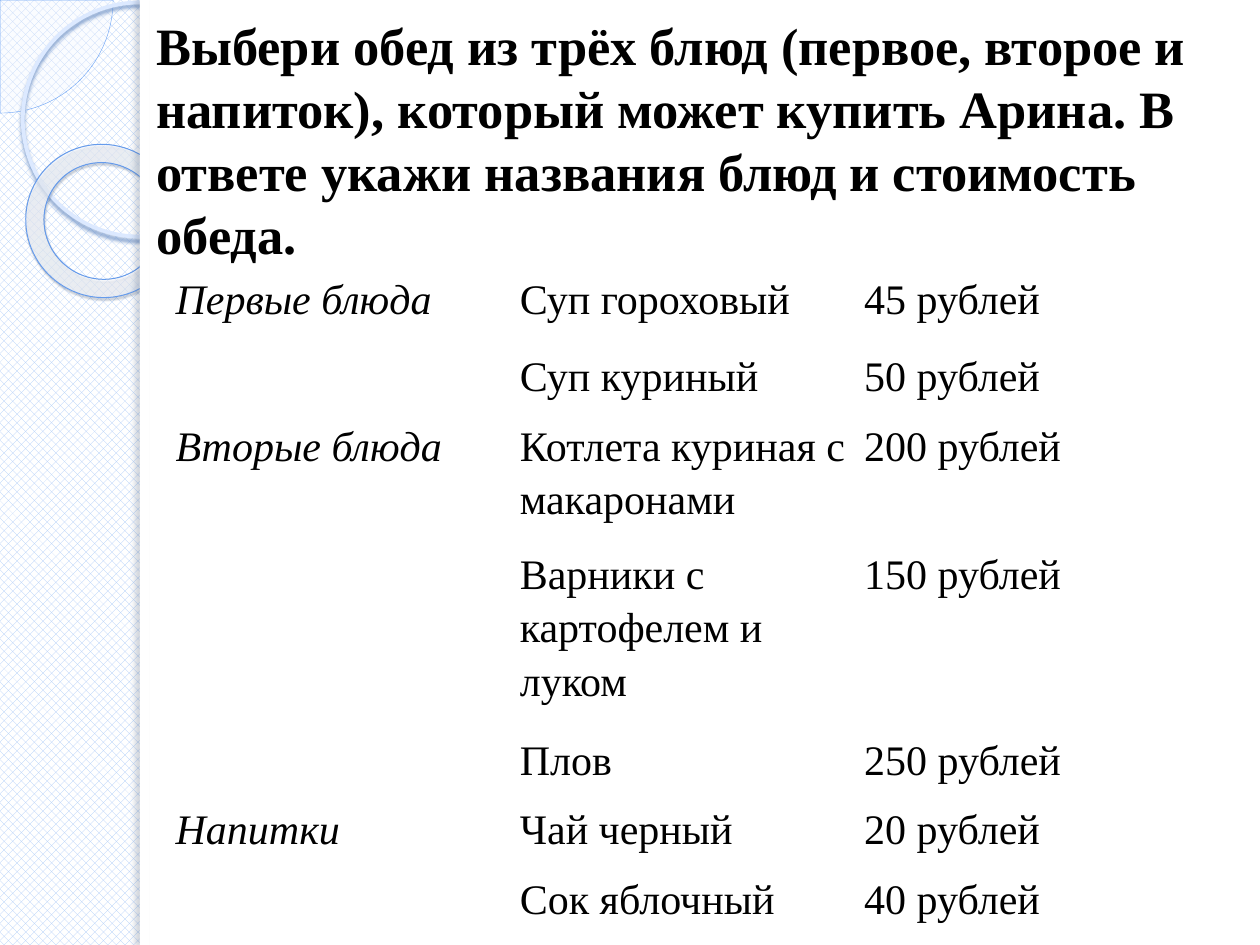
from lxml.etree import SubElement
from pptx import Presentation
from pptx.dml.color import RGBColor
from pptx.enum.dml import MSO_PATTERN
from pptx.enum.shapes import MSO_SHAPE
from pptx.enum.text import MSO_AUTO_SIZE
from pptx.oxml import parse_xml
from pptx.oxml.ns import nsdecls, qn
from pptx.util import Cm, Pt

FONT = "Times New Roman"
COLORS = {
    "text": "000000", "panel": "FFFFFF", "pattern": "ACCBF9",
    "pie": "F2F6FF", "pie_line": "72A7F6",
    "circle_line": "DCE9FF", "circle_shadow": "7193C6",
    "ring_in": "F5F9FF", "ring_mid": "FBFCFF", "ring_out": "75ACFF",
    "ring_line": "659BEC", "ring_shadow": "31486A", "edge_shadow": "54647E",
}
TITLE = ("Выбери обед из трёх блюд (первое, второе и напиток), который может "
         "купить Арина. В ответе укажи названия блюд и стоимость обеда.")
MENU = [
    ("Первые блюда", [("Суп гороховый", "45 рублей", 1.55),
                      ("Суп куриный", "50 рублей", 1.4)]),
    ("Вторые блюда", [("Котлета куриная с макаронами", "200 рублей", 2.55),
                      ("Варники с картофелем и луком", "150 рублей", 3.7),
                      ("Плов", "250 рублей", 1.4)]),
    ("Напитки", [("Чай черный", "20 рублей", 1.4),
                 ("Сок яблочный", "40 рублей", 1.4)]),
]


def rgb(name):
    """Return the named colour."""
    return RGBColor.from_string(COLORS[name])


def add_color(parent, name, alpha):
    """Append a colour of the given opacity in percent to an XML element."""
    clr = SubElement(parent, qn("a:srgbClr"), val=COLORS[name])
    SubElement(clr, qn("a:alpha"), val=str(alpha * 1000))


def add_figure(s, kind, box, fill=None, line=None, width=0):
    """Add a preset shape with an optional solid fill and outline."""
    sp = s.shapes.add_shape(kind, *map(Cm, box))
    sp.shadow.inherit = False
    if fill:
        sp.fill.solid()
        sp.fill.fore_color.rgb = rgb(fill)
    else:
        sp.fill.background()
    if line:
        sp.line.color.rgb = rgb(line)
        sp.line.width = Pt(width)
    else:
        sp.line.fill.background()
    return sp


def add_shadow(sp, color, alpha, blur, dist, angle):
    """Give a shape an outer shadow, with lengths in points."""
    effects = sp._element.spPr.find(qn("a:effectLst"))
    shadow = SubElement(effects, qn("a:outerShdw"), blurRad=str(Pt(blur)),
                        dist=str(Pt(dist)), dir=str(angle * 60000), rotWithShape="0")
    add_color(shadow, color, alpha)


def set_radial_fill(sp, stops):
    """Replace a shape's empty fill with a circular gradient."""
    grad = parse_xml(f'<a:gradFill {nsdecls("a")}><a:gsLst/><a:path path="circle">'
                     '<a:fillToRect l="-408000" t="-50000" r="508000" b="150000"/>'
                     '</a:path></a:gradFill>')
    for pos, color, alpha in stops:
        add_color(SubElement(grad[0], qn("a:gs"), pos=str(pos * 1000)), color, alpha)
    spPr = sp._element.spPr
    spPr.replace(spPr.find(qn("a:noFill")), grad)


def add_decoration(s):
    """Draw the patterned side strip, its circles and the white panel."""
    fill = s.background.fill
    fill.patterned()
    fill.pattern = MSO_PATTERN.PERCENT_50
    fill.fore_color.rgb = rgb("pattern")
    fill.back_color.rgb = rgb("panel")

    pie = add_figure(s, MSO_SHAPE.PIE, (-2.27, -2.27, 4.55, 4.55), "pie", "pie_line", 0.25)
    pie.adjustments[0] = 0
    pie.adjustments[1] = 54.02
    clr = pie._element.spPr.find(qn("a:solidFill"))[0]
    SubElement(clr, qn("a:alpha"), val="33000")

    circle = add_figure(s, MSO_SHAPE.OVAL, (0.46, 0.05, 4.72, 4.72),
                        line="circle_line", width=2.15)
    add_shadow(circle, "circle_shadow", 85, 2, 2, 90)

    ring = add_figure(s, MSO_SHAPE.DONUT, (0.51, 2.92, 3.12, 3.07),
                      line="ring_line", width=0.58)
    ring.adjustments[0] = 0.12
    ring.rotation = 38.6
    set_radial_fill(ring, [(0, "ring_in", 70), (70, "ring_mid", 55), (100, "ring_out", 60)])
    add_shadow(ring, "ring_shadow", 35, 1, 1.2, 75)

    add_figure(s, MSO_SHAPE.RECTANGLE, (2.82, 0, 22.58, 19.05), "panel")
    edge = add_figure(s, MSO_SHAPE.RECTANGLE, (2.82, 0, 0.2, 19.05), "panel")
    add_shadow(edge, "edge_shadow", 25, 3, 3, 180)


def style_paragraph(p, size, bold=False, italic=False):
    """Set the font of a whole paragraph."""
    p.font.name = FONT
    p.font.size = Pt(size)
    p.font.bold = bold
    p.font.italic = italic
    p.font.color.rgb = rgb("text")


def add_title(s):
    """Add the task text."""
    tf = s.shapes.add_textbox(Cm(2.9), Cm(0.13), Cm(21.8), Cm(5.38)).text_frame
    tf.word_wrap = True
    tf.auto_size = MSO_AUTO_SIZE.SHAPE_TO_FIT_TEXT
    tf.text = TITLE
    style_paragraph(tf.paragraphs[0], 30, bold=True)


def fill_cell(cell, text, italic=False):
    """Write one menu cell."""
    cell.text = text
    p = cell.text_frame.paragraphs[0]
    p.line_spacing = 1.15
    p.space_after = Pt(6.8)
    style_paragraph(p, 24, italic=italic)


def add_menu(s):
    """Add the menu table, with each course merged over its dishes."""
    heights = [height for _, dishes in MENU for _, _, height in dishes]
    table = s.shapes.add_table(len(heights), 3, Cm(3.38), Cm(5.33),
                               Cm(20.82), Cm(sum(heights))).table
    table.first_row = table.horz_banding = False
    for cell in table.iter_cells():
        cell.fill.background()
        cell.margin_left = cell.margin_right = Cm(0.16)
        cell.margin_top = cell.margin_bottom = Cm(0.12)
    row = 0
    for course, dishes in MENU:
        table.cell(row, 0).merge(table.cell(row + len(dishes) - 1, 0))
        fill_cell(table.cell(row, 0), course, italic=True)
        for dish, price, height in dishes:
            table.rows[row].height = Cm(height)
            fill_cell(table.cell(row, 1), dish)
            fill_cell(table.cell(row, 2), price)
            row += 1


def main():
    """Build and save the slide."""
    prs = Presentation()
    prs.slide_width, prs.slide_height = Cm(25.4), Cm(19.05)
    s = prs.slides.add_slide(prs.slide_layouts[6])
    add_decoration(s)
    add_title(s)
    add_menu(s)
    prs.save("out.pptx")


if __name__ == "__main__":
    main()
